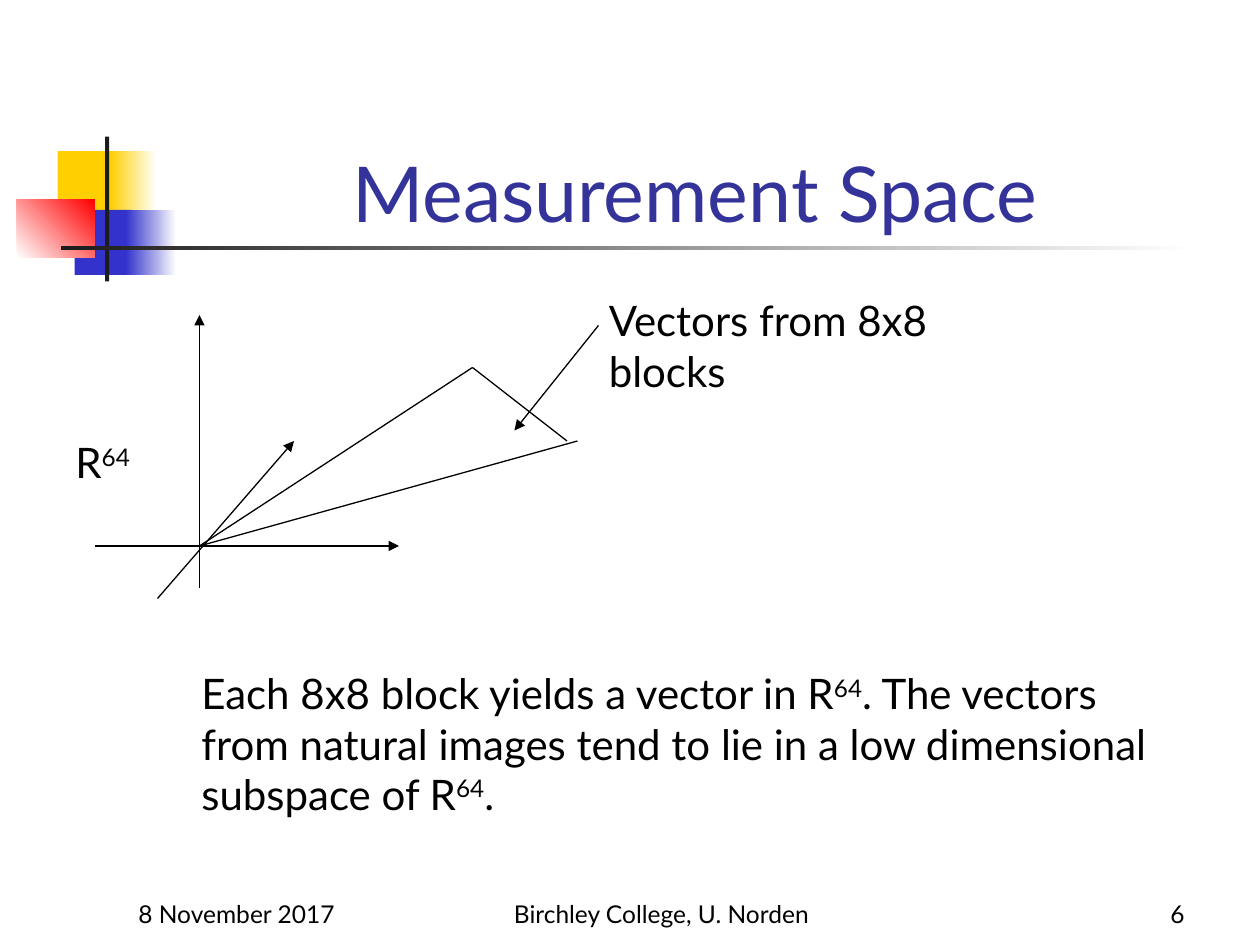
from lxml.etree import SubElement
from pptx import Presentation
from pptx.dml.color import RGBColor
from pptx.enum.shapes import MSO_CONNECTOR, MSO_SHAPE
from pptx.enum.text import MSO_ANCHOR, PP_ALIGN
from pptx.oxml.ns import qn
from pptx.util import Inches, Pt

# The page is a grid of 120 columns by 90 rows; one cell is a twelfth of an inch.
CELL = Inches(1) // 12
BLACK = "000000"
WHITE = "FFFFFF"

deck = Presentation()
deck.slide_width, deck.slide_height = 120 * CELL, 90 * CELL
page = deck.slides.add_slide(deck.slide_layouts[6])


def color(hex_string):
    return RGBColor.from_string(hex_string)


def add_text(text, area, size=24, ink=BLACK, align=PP_ALIGN.LEFT,
             anchor=MSO_ANCHOR.TOP, wrap=True):
    """Add a text box; newlines split paragraphs and ^ encloses superscripts."""
    box = page.shapes.add_textbox(*(round(cells * CELL) for cells in area))
    frame = box.text_frame
    frame.word_wrap = wrap
    frame.vertical_anchor = anchor
    for index, line in enumerate(text.split("\n")):
        para = frame.add_paragraph() if index else frame.paragraphs[0]
        para.alignment = align
        for part, words in enumerate(line.split("^")):
            span = para.add_run()
            span.text = words
            span.font.name = "Lato"
            span.font.size = Pt(size)
            span.font.color.rgb = color(ink)
            if part % 2:
                span._r.get_or_add_rPr().set("baseline", "30000")


# Corner ornament: left, top, width, height, start colour, end colour, angle
ornament = [
    (5.5, 14.4, 5.8, 6.2, "FFCF01", None, 0),
    (10.5, 14.4, 4.4, 6.2, "FFCF01", WHITE, 0),
    (7.1, 20, 5.5, 6.2, "3333CC", None, 0),
    (12, 20, 4.8, 6.2, "3333CC", WHITE, 0),
    (1.6, 19, 7.4, 5.5, WHITE, "FF0000", 45),
    (10, 13, 0.4, 13.8, "1C1C1C", None, 0),
    (5.8, 23.4, 108, 0.4, "1C1C1C", WHITE, 0),
]
for *area, start, end, angle in ornament:
    block = page.shapes.add_shape(
        MSO_SHAPE.RECTANGLE, *(round(cells * CELL) for cells in area))
    block.shadow.inherit = False
    block.line.fill.background()
    if end:
        block.fill.gradient()
        block.fill.gradient_angle = angle
        for stop, shade in zip(block.fill.gradient_stops, (start, end)):
            stop.color.rgb = color(shade)
    else:
        block.fill.solid()
        block.fill.fore_color.rgb = color(start)

footer = [
    ("8 November 2017", 12, 25, PP_ALIGN.LEFT),
    ("Birchley College, U. Norden", 44, 38, PP_ALIGN.CENTER),
    ("6", 89, 25, PP_ALIGN.RIGHT),
]
for words, left, width, align in footer:
    add_text(words, (left, 83, width, 6), size=14, align=align,
             anchor=MSO_ANCHOR.BOTTOM)

add_text("Measurement Space", (15.1, 8.2, 102.2, 15), size=44, ink="333399",
         align=PP_ALIGN.CENTER, anchor=MSO_ANCHOR.BOTTOM)
add_text("Each 8x8 block yields a vector in R^64^. The vectors\n"
         "from natural images tend to lie in a low dimensional\n"
         "subspace of R^64^.", (18, 63, 95, 15.7))
add_text("R^64^", (6, 41, 7.8, 6), wrap=False)
add_text("Vectors from 8x8 blocks", (56.8, 27.5, 42, 10))

# Axes, subspace triangle and pointer: start column, row, end column, row, arrow
origin = (19, 52)
apex = (45, 35)
lines = [
    (19, 56, 19, 30, True),
    (9, 52, 38, 52, True),
    (15, 57, 28, 42, True),
    (*origin, *apex, False),
    (*apex, 54, 42, False),
    (55, 42, *origin, False),
    (57, 31, 49, 41, True),
]
for *ends, has_arrow in lines:
    line = page.shapes.add_connector(
        MSO_CONNECTOR.STRAIGHT, *(cells * CELL for cells in ends))
    line.line.color.rgb = color(BLACK)
    line.line.width = Pt(0.75)
    if has_arrow:
        SubElement(line.line._get_or_add_ln(), qn("a:tailEnd"), type="triangle")
    SubElement(line._element.spPr, qn("a:effectLst"))

deck.save("out.pptx")
